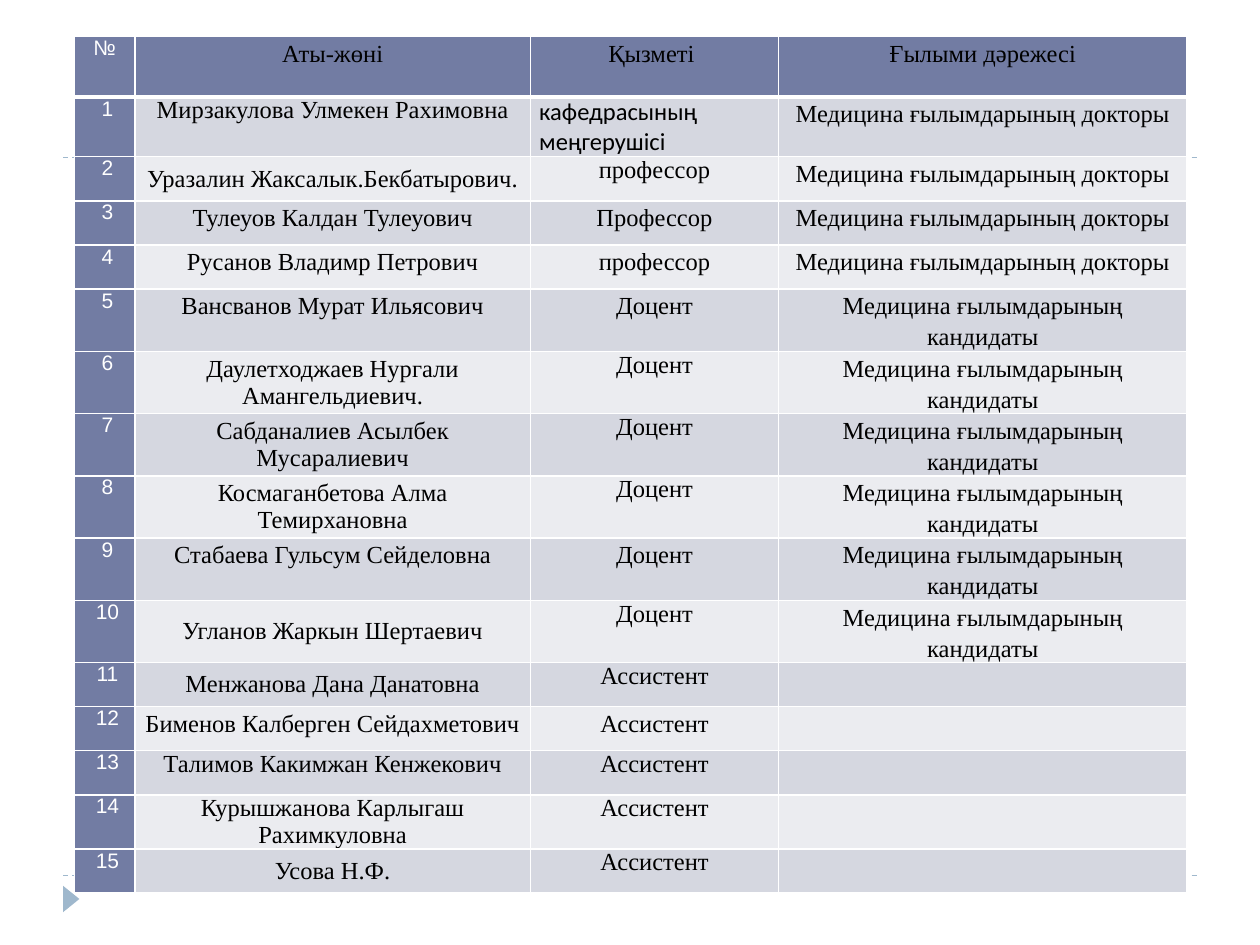
from lxml.etree import SubElement
from pptx import Presentation
from pptx.dml.color import RGBColor
from pptx.enum.dml import MSO_LINE
from pptx.enum.shapes import MSO_CONNECTOR, MSO_SHAPE
from pptx.enum.text import MSO_ANCHOR, PP_ALIGN
from pptx.oxml.ns import qn
from pptx.util import Inches, Pt

BLACK = RGBColor(0x00, 0x00, 0x00)
WHITE = RGBColor(0xFF, 0xFF, 0xFF)
HEAD = RGBColor(0x72, 0x7C, 0xA3)
BANDS = (RGBColor(0xD5, 0xD7, 0xE0), RGBColor(0xEB, 0xEC, 0xF0))
ACCENT = RGBColor(0x9F, 0xB8, 0xCD)

SERIF = "Times New Roman"
COL_WIDTHS = (0.48, 3.14, 1.97, 3.24)
HEAD_HEIGHT, ROW_HEIGHT = 0.48, 0.35
LOOSE = 1.15  # line spacing of the airy cells

HEADERS = ("№", "Аты-жөні", "Қызметі ", "Ғылыми дәрежесі")
DOCTOR = "Медицина ғылымдарының докторы"
CANDIDATE = "Медицина ғылымдарының кандидаты"
CHIEF = "кафедрасының\nмеңгерушісі"

# Name, post, degree, and how the name sits: top, middle or loose
STAFF = (
    ("Мирзакулова Улмекен Рахимовна", CHIEF, DOCTOR, "top"),
    ("Уразалин Жаксалык.Бекбатырович.", "профессор", DOCTOR, "middle"),
    ("Тулеуов Калдан Тулеуович", "Профессор", DOCTOR, "loose"),
    ("Русанов Владимр Петрович", "профессор", DOCTOR, "loose"),
    ("Вансванов Мурат Ильясович", "Доцент", CANDIDATE, "loose"),
    ("Даулетходжаев Нургали Амангельдиевич.", "Доцент", CANDIDATE, "middle"),
    ("Сабданалиев Асылбек Мусаралиевич", "Доцент", CANDIDATE, "middle"),
    ("Космаганбетова Алма Темирхановна", "Доцент", CANDIDATE, "middle"),
    ("Стабаева Гульсум Сейделовна", "Доцент", CANDIDATE, "loose"),
    ("Угланов Жаркын Шертаевич", "Доцент", CANDIDATE, "middle"),
    ("Менжанова Дана Данатовна", "Ассистент", "", "middle"),
    ("Бименов Калберген Сейдахметович", "Ассистент", "", "loose"),
    ("Талимов Какимжан Кенжекович", "Ассистент", "", "top"),
    ("Курышжанова Карлыгаш Рахимкуловна", "Ассистент", "", "middle"),
    ("Усова Н.Ф.", "Ассистент", "", "middle"),
)


def add_rule(slide, y):
    """Dashed line across the slide."""
    line = slide.shapes.add_connector(
        MSO_CONNECTOR.STRAIGHT, Inches(0.5), Inches(y), Inches(9.5), Inches(y))
    line.line.color.rgb = ACCENT
    line.line.width = Pt(0.75)
    line.line.dash_style = MSO_LINE.DASH
    SubElement(line._element.spPr, qn("a:effectLst"))


def add_marker(slide):
    """Small triangle pointing right."""
    sp = slide.shapes.add_shape(MSO_SHAPE.ISOSCELES_TRIANGLE, Inches(0.46),
                                Inches(7.07), Inches(0.21), Inches(0.13))
    sp.rotation = 90
    sp.shadow.inherit = False
    sp.fill.solid()
    sp.fill.fore_color.rgb = ACCENT
    sp.line.fill.background()


def set_borders(cell, bottom=1):
    tc_pr = cell._tc.get_or_add_tcPr()
    widths = {"lnL": 1, "lnR": 1, "lnT": 1, "lnB": bottom}
    for i, (side, width) in enumerate(widths.items()):
        ln = SubElement(tc_pr, qn(f"a:{side}"), w=str(Pt(width)))
        fill = SubElement(ln, qn("a:solidFill"))
        SubElement(fill, qn("a:srgbClr"), val=str(WHITE))
        tc_pr.insert(i, ln)  # borders come before the fill


def fill_cell(cell, text, fill, font=SERIF, size=14, color=BLACK,
              align=PP_ALIGN.CENTER, spacing=None, inset=0.07, bottom=1):
    cell.margin_left = cell.margin_right = Inches(inset)
    cell.margin_top = cell.margin_bottom = 0
    cell.fill.solid()
    cell.fill.fore_color.rgb = fill
    set_borders(cell, bottom)
    if not text:
        return
    tf = cell.text_frame
    for i, part in enumerate(text.split("\n")):
        p = tf.add_paragraph() if i else tf.paragraphs[0]
        p.alignment = align
        if spacing:
            p.line_spacing = spacing
        r = p.add_run()
        r.text = part
        r.font.name = font
        r.font.size = Pt(size)
        r.font.bold = False
        r.font.color.rgb = color


def add_staff_table(slide):
    height = HEAD_HEIGHT + ROW_HEIGHT * len(STAFF)
    table = slide.shapes.add_table(
        len(STAFF) + 1, len(COL_WIDTHS), Inches(0.59), Inches(0.29),
        Inches(sum(COL_WIDTHS)), Inches(height)).table
    for col, width in zip(table.columns, COL_WIDTHS):
        col.width = Inches(width)
    for i, row in enumerate(table.rows):
        row.height = Inches(ROW_HEIGHT if i else HEAD_HEIGHT)

    # Header row
    number = dict(font="Arial", size=12, color=WHITE)
    for c, title in enumerate(HEADERS):
        style = dict(spacing=LOOSE, inset=0.03) if c else number
        fill_cell(table.cell(0, c), title, HEAD, bottom=3, **style)

    # Staff rows
    for i, (name, post, degree, mode) in enumerate(STAFF, 1):
        band = BANDS[(i - 1) % 2]
        spacing = LOOSE if mode == "loose" else None
        post_style = dict(spacing=spacing)
        if post == CHIEF:
            post_style = dict(font="Calibri", align=PP_ALIGN.LEFT)
        num_cell, name_cell, post_cell, degree_cell = table.rows[i].cells
        fill_cell(num_cell, f" {i}", HEAD, **number)
        fill_cell(name_cell, name, band, spacing=spacing)
        if mode == "middle":
            name_cell.vertical_anchor = MSO_ANCHOR.MIDDLE
        fill_cell(post_cell, post, band, **post_style)
        fill_cell(degree_cell, degree, band, spacing=LOOSE)


def main():
    prs = Presentation()
    prs.slide_width, prs.slide_height = Inches(10), Inches(7.5)
    slide = prs.slides.add_slide(prs.slide_layouts[6])
    # Decoration behind the table
    for y in (6.95, 1.25):
        add_rule(slide, y)
    add_marker(slide)
    add_staff_table(slide)
    prs.save("out.pptx")


if __name__ == "__main__":
    main()
